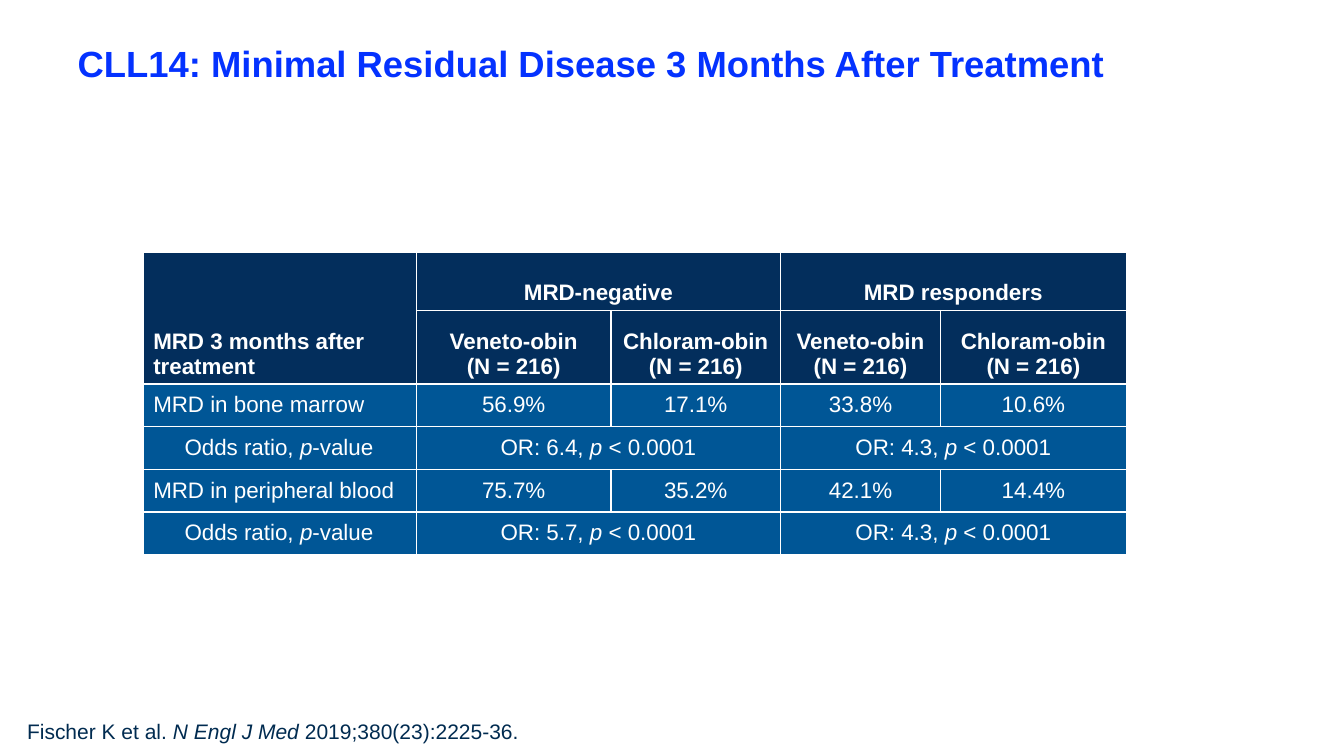
from lxml import etree
from pptx import Presentation
from pptx import util as u
from pptx.dml import color
from pptx.enum import text
from pptx.oxml import ns

WHITE, NAVY, BLUE = "FFFFFF", "032E5C", "005696"


def rgb(hex_string):
    return color.RGBColor.from_string(hex_string)


def write(para, words, size, ink, bold=False):
    """Add words run by run; parts between asterisks are italic."""
    for index, part in enumerate(words.split("*")):
        if part:
            span = para.add_run()
            span.text = part
            span.font.name = "Arial"
            span.font.size = u.Pt(size)
            span.font.bold = bold
            span.font.italic = index % 2 == 1
            span.font.color.rgb = rgb(ink)


deck = Presentation()
deck.slide_width, deck.slide_height = u.Inches(13.33), u.Inches(7.5)
page = deck.slides.add_slide(deck.slide_layouts[5])

# Title
title = page.shapes.title
title.left, title.top = u.Inches(0.67), u.Inches(0)
title.width, title.height = u.Inches(12), u.Inches(1.25)
title.text_frame.vertical_anchor = text.MSO_ANCHOR.MIDDLE
title_para = title.text_frame.paragraphs[0]
title_para.alignment = text.PP_ALIGN.LEFT
write(title_para, "CLL14: Minimal Residual Disease 3 Months After Treatment",
      26, "0432FF", bold=True)

# Table content: None marks a cell covered by a merge
VENETO, CHLORAM = "Veneto-obin\n(N = 216)", "Chloram-obin\n(N = 216)"
ODDS = "Odds ratio, *p*-value"
rows = [
    ["MRD 3 months after treatment", "MRD-negative", None, "MRD responders", None],
    [None, VENETO, CHLORAM, VENETO, CHLORAM],
    ["MRD in bone marrow", "56.9%", "17.1%", "33.8%", "10.6%"],
    [ODDS, "OR: 6.4, *p* < 0.0001", None, "OR: 4.3, *p* < 0.0001", None],
    ["MRD in peripheral blood", "75.7%", "35.2%", "42.1%", "14.4%"],
    [ODDS, "OR: 5.7, *p* < 0.0001", None, "OR: 4.3, *p* < 0.0001", None],
]
column_widths = [2.71, 1.93, 1.68, 1.59, 1.84]
row_heights = [0.58, 0.73, 0.42, 0.43, 0.42, 0.42]
HEADER_ROWS = 2

# Table grid
table = page.shapes.add_table(
    len(rows), len(column_widths), u.Inches(1.42), u.Inches(2.5),
    u.Inches(sum(column_widths)), u.Inches(sum(row_heights))).table
for column, width in zip(table.columns, column_widths):
    column.width = u.Inches(width)
for row, height in zip(table.rows, row_heights):
    row.height = u.Inches(height)

# Merges: the row heading spans down, group cells span two columns
table.cell(0, 0).merge(table.cell(1, 0))
for r, row in enumerate(rows):
    for c in (1, 3):
        if row[c + 1] is None:
            table.cell(r, c).merge(table.cell(r, c + 1))

# Cell borders, fills and text
for r, row in enumerate(rows):
    header = r < HEADER_ROWS
    for c, words in enumerate(row):
        cell = table.cell(r, c)
        properties = cell._tc.get_or_add_tcPr()
        for side in ("lnL", "lnR", "lnT", "lnB"):
            line = etree.SubElement(properties, ns.qn("a:" + side), w=str(u.Pt(1)))
            fill = etree.SubElement(line, ns.qn("a:solidFill"))
            etree.SubElement(fill, ns.qn("a:srgbClr"), val=WHITE)
        cell.fill.solid()
        cell.fill.fore_color.rgb = rgb(NAVY if header else BLUE)
        if words is None:
            continue
        cell.vertical_anchor = (text.MSO_ANCHOR.BOTTOM if header
                                else text.MSO_ANCHOR.MIDDLE)
        for n, line_words in enumerate(words.split("\n")):
            frame = cell.text_frame
            para = frame.add_paragraph() if n else frame.paragraphs[0]
            para.alignment = text.PP_ALIGN.CENTER if c else text.PP_ALIGN.LEFT
            if words == ODDS:
                para._p.get_or_add_pPr().set("marL", str(u.Inches(0.31)))
            write(para, line_words, 16, WHITE, bold=header)

# Citation
box = page.shapes.add_textbox(u.Inches(0.17), u.Inches(7.08),
                              u.Inches(5.19), u.Inches(0.35))
box.text_frame.word_wrap = False
box.text_frame.auto_size = text.MSO_AUTO_SIZE.SHAPE_TO_FIT_TEXT
write(box.text_frame.paragraphs[0],
      "Fischer K et al. *N Engl J Med *2019;380(23):2225-36.", 15, "002B50")

deck.save("out.pptx")
